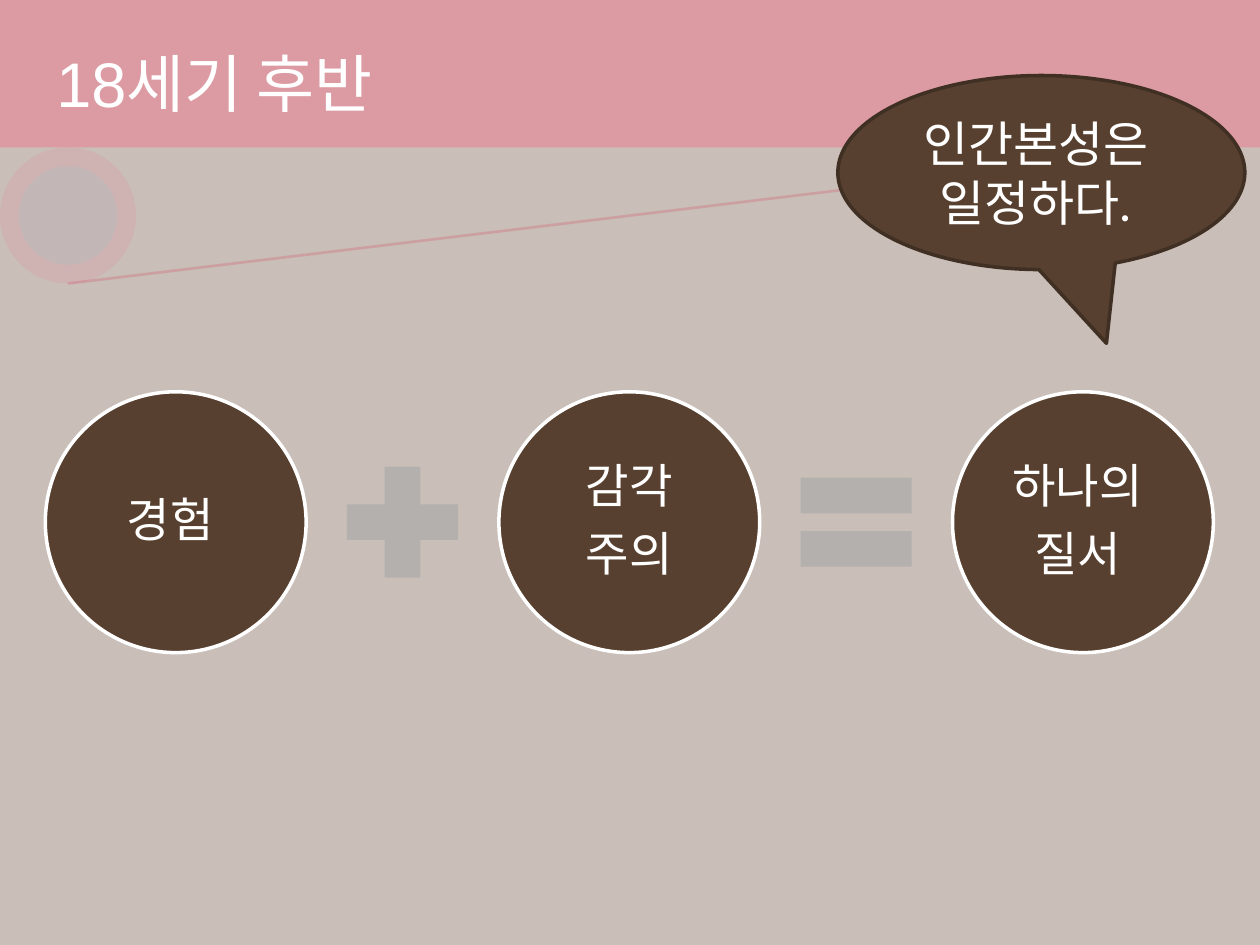
from dataclasses import dataclass

from lxml import etree
from pptx import Presentation
from pptx import util as u
from pptx.dml.color import RGBColor
from pptx.enum import shapes, text
from pptx.oxml.ns import qn

Inches = u.Inches
Shape = shapes.MSO_SHAPE


@dataclass(frozen=True)
class Theme:
    background: str = "C9BEB8"
    band: str = "DC9BA3"
    ring: str = "E88B9D"
    ring_center: str = "94C7CC"
    string: str = "D83D5C"
    brown: str = "57402F"
    dark_brown: str = "402F23"
    operator: str = "B4B0AD"
    white: str = "FFFFFF"
    title_font: str = "Arial"
    body_font: str = "Lato"
    title_size: int = 36
    term_size: int = 27
    callout_size: int = 28


THEME = Theme()


def set_alpha(element, percent):
    """Make the one solid colour inside the element partly transparent."""
    color = next(element.iter(qn("a:srgbClr")))
    etree.SubElement(color, qn("a:alpha")).set("val", str(percent * 1000))


def add_filled(slide, kind, box, fill, line=None):
    shape = slide.shapes.add_shape(kind, *map(Inches, box))
    shape.shadow.inherit = False
    shape.fill.solid()
    shape.fill.fore_color.rgb = RGBColor.from_string(fill)
    if line:
        shape.line.color.rgb = RGBColor.from_string(line)
        shape.line.width = u.Pt(2)
    else:
        shape.line.fill.background()
    return shape


def write(shape, words, font, size, align, margin=None):
    frame = shape.text_frame
    frame.word_wrap = True
    frame.vertical_anchor = text.MSO_ANCHOR.MIDDLE
    if margin is not None:
        frame.margin_left = frame.margin_right = Inches(margin)
        frame.margin_top = frame.margin_bottom = Inches(margin)
    frame.text = words
    for paragraph in frame.paragraphs:
        paragraph.alignment = align
        for run in paragraph.runs:
            run.font.name = font
            run.font.size = u.Pt(size)
            run.font.color.rgb = RGBColor.from_string(THEME.white)
    return frame


def add_ornament(slide, box, string_end):
    """Pale ring with a string running from its foot to string_end."""
    left, top, width, height = box
    inset = 0.15
    center = (left + inset, top + inset, width - 2 * inset, height - 2 * inset)
    for part, color in ((box, THEME.ring), (center, THEME.ring_center)):
        circle = add_filled(slide, Shape.OVAL, part, color)
        set_alpha(circle.fill._xPr, 22)
    string = slide.shapes.add_connector(
        shapes.MSO_CONNECTOR.STRAIGHT,
        *map(Inches, (left + width / 2, top + height, *string_end)))
    string.line.color.rgb = RGBColor.from_string(THEME.string)
    string.line.width = u.Pt(1.5)
    properties = string._element.spPr
    set_alpha(properties, 23)
    etree.SubElement(properties, qn("a:effectLst"))


def add_title_band(slide, box, title):
    left, top, width, height = box
    add_filled(slide, Shape.RECTANGLE, box, THEME.band)
    label = slide.shapes.add_textbox(
        *map(Inches, (left + 0.35, top + 0.14, width - 0.73, height - 0.14)))
    write(label, title, THEME.title_font, THEME.title_size, text.PP_ALIGN.LEFT)


def add_term(slide, box, words):
    left, top, size, _ = box
    add_filled(slide, Shape.OVAL, box, THEME.brown, THEME.white)
    inset = 0.3
    side = size - 2 * inset
    label = slide.shapes.add_textbox(
        *map(Inches, (left + inset, top + inset, side, side)))
    frame = write(label, words, THEME.body_font, THEME.term_size,
                  text.PP_ALIGN.CENTER, margin=0.04)
    for paragraph in frame.paragraphs:
        paragraph.line_spacing = 0.9
        paragraph.space_after = u.Pt(0.35 * THEME.term_size)


def add_equation(slide, box, terms, operators):
    """Circles spread evenly over the box, with an operator in each gap."""
    left, top, width, size = box
    pitch = (width - size) / (len(terms) - 1)
    operator_size = 1.2
    operator_left = left + (size + pitch - operator_size) / 2
    operator_top = top + (size - operator_size) / 2
    for index, words in enumerate(terms):
        add_term(slide, (left + index * pitch, top, size, size), words)
    for index, kind in enumerate(operators):
        add_filled(slide, kind,
                   (operator_left + index * pitch, operator_top,
                    operator_size, operator_size), THEME.operator)


def add_callout(slide, box, words):
    callout = add_filled(slide, Shape.OVAL_CALLOUT, box, THEME.brown,
                         THEME.dark_brown)
    callout.adjustments[0] = 0.16
    callout.adjustments[1] = 0.88
    write(callout, words, THEME.body_font, THEME.callout_size,
          text.PP_ALIGN.CENTER)


def main():
    presentation = Presentation()
    presentation.slide_width = Inches(10)
    presentation.slide_height = Inches(7.5)
    slide = presentation.slides.add_slide(presentation.slide_layouts[6])
    slide.background.fill.solid()
    slide.background.fill.fore_color.rgb = RGBColor.from_string(THEME.background)

    add_ornament(slide, (0, 1.17, 1.08, 1.08), string_end=(9.56, 1.16))
    add_title_band(slide, (0, 0, 10, 1.17), "18세기 후반")
    add_equation(slide, (0.36, 3.11, 9.27, 2.07),
                 ("경험 ", "감각\n주의", "하나의 \n질서 "),
                 (Shape.MATH_PLUS, Shape.MATH_EQUAL))
    add_callout(slide, (6.65, 0.6, 3.23, 1.54), "인간본성은 \n일정하다. ")
    presentation.save("out.pptx")


if __name__ == "__main__":
    main()
